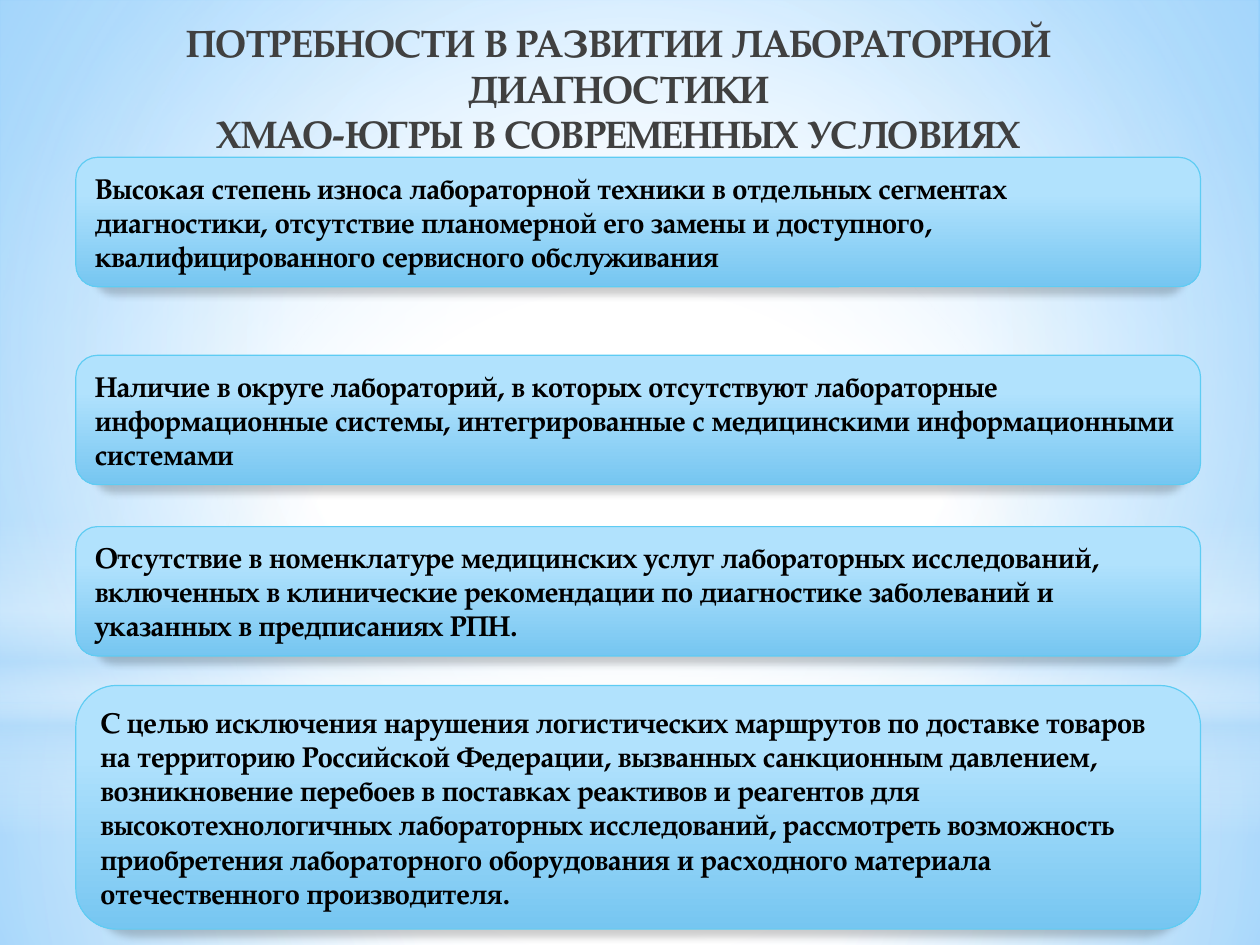
from lxml import etree
from pptx import Presentation
from pptx.dml.color import RGBColor
from pptx.enum.shapes import MSO_SHAPE as Shape
from pptx.enum.text import MSO_ANCHOR as Anchor, PP_ALIGN as Align
from pptx.oxml import parse_xml
from pptx.oxml.ns import nsdecls, qn
from pptx.util import Pt

COLORS = {
    "white": "FFFFFF", "sky": "63BCFF", "mist": "B4DCFA",
    "box_top": "B1E2FD", "box_bottom": "76C6F1", "box_line": "5ECCF3",
    "black": "000000", "title": "404040",
}
FONT = "TeX Gyre Pagella"
WIDTH, HEIGHT = 793.7, 595.28


def set_gradient(fill, element, stops, focus=None):
    """Fill with (position, colour, opacity) stops: circular around focus, else downwards."""
    fill.solid()
    stop_xml = "".join(
        f'<a:gs pos="{position * 1000}"><a:srgbClr val="{COLORS[color]}">'
        f'<a:alpha val="{opacity * 1000}"/></a:srgbClr></a:gs>'
        for position, color, opacity in stops)
    direction = '<a:lin ang="5400000" scaled="0"/>'
    if focus:
        sides = " ".join(f'{side}="{value * 1000}"' for side, value in zip("ltrb", focus))
        direction = f'<a:path path="circle"><a:fillToRect {sides}/></a:path>'
    gradient = parse_xml(f'<a:gradFill {nsdecls("a")} rotWithShape="1">'
                         f'<a:gsLst>{stop_xml}</a:gsLst>{direction}</a:gradFill>')
    solid = element.find(".//" + qn("a:solidFill"))
    solid.getparent().replace(solid, gradient)


def write(shape, *lines, size, color, align=Align.LEFT, anchor=Anchor.TOP, margins=(7.2, 3.6)):
    frame = shape.text_frame
    frame.word_wrap = True
    frame.vertical_anchor = anchor
    frame.margin_left = frame.margin_right = Pt(margins[0])
    frame.margin_top = frame.margin_bottom = Pt(margins[1])
    for number, line in enumerate(lines):
        paragraph = frame.add_paragraph() if number else frame.paragraphs[0]
        paragraph.alignment = align
        run = paragraph.add_run()
        run.text = line
        run.font.name = FONT
        run.font.size = Pt(size)
        run.font.bold = True
        run.font.color.rgb = RGBColor.from_string(COLORS[color])


presentation = Presentation()
presentation.slide_width, presentation.slide_height = Pt(WIDTH), Pt(HEIGHT)
slide = presentation.slides.add_slide(presentation.slide_layouts[6])
set_gradient(slide.background.fill, slide.element,
             [(0, "white", 100), (42, "white", 100), (100, "sky", 100)], (24, 44, 24, 12))

# Soft light bands and glow behind the content
CENTER = (50, 50, 50, 50)
HORIZON = 443.5
backdrop = [
    (Shape.RECTANGLE, HORIZON, HEIGHT - HORIZON, CENTER,
     [(0, "white", 91), (37, "white", 76), (100, "mist", 79)]),
    (Shape.RECTANGLE, 0, HORIZON, CENTER,
     [(0, "white", 89), (48, "white", 62), (100, "mist", 79)]),
    (Shape.RECTANGLE, 327, 198.5, None,
     [(0, "white", 0), (29, "white", 30), (45, "mist", 40),
      (55, "white", 26), (65, "mist", 60), (100, "white", 0)]),
    (Shape.OVAL, 139, HORIZON, CENTER, [(0, "white", 100), (56, "white", 0)]),
]
for kind, top, height, focus, stops in backdrop:
    layer = slide.shapes.add_shape(kind, 0, Pt(top), Pt(WIDTH), Pt(height))
    layer.shadow.inherit = False
    layer.line.fill.background()
    set_gradient(layer.fill, layer.element, stops, focus)

BOX_HEIGHT, LAST_HEIGHT = 81.5, 153.5
needs = [
    (223.8, BOX_HEIGHT,
     "Наличие в округе лабораторий, в которых отсутствуют лабораторные "
     "информационные системы, интегрированные с медицинскими информационными системами"),
    (331.7, BOX_HEIGHT,
     "Отсутствие в номенклатуре медицинских услуг лабораторных исследований, "
     "включенных в клинические рекомендации по диагностике заболеваний и "
     "указанных в предписаниях РПН."),
    (431.8, LAST_HEIGHT,
     "С целью исключения нарушения логистических маршрутов по доставке товаров "
     "на территорию Российской Федерации, вызванных санкционным давлением, "
     "возникновение перебоев в поставках реактивов и реагентов для "
     "высокотехнологичных лабораторных исследований, рассмотреть возможность "
     "приобретения лабораторного оборудования и расходного материала "
     "отечественного производителя."),
    (99.1, BOX_HEIGHT,
     "Высокая степень износа лабораторной техники в отдельных сегментах "
     "диагностики, отсутствие планомерной его замены и доступного, "
     "квалифицированного сервисного обслуживания"),
]
for top, height, text in needs:
    box = slide.shapes.add_shape(Shape.ROUNDED_RECTANGLE, Pt(47.8), Pt(top), Pt(708.5), Pt(height))
    set_gradient(box.fill, box.element, [(28, "box_top", 100), (100, "box_bottom", 100)])
    box.line.color.rgb = RGBColor.from_string(COLORS["box_line"])
    box.line.width = Pt(0.75)
    box.shadow.inherit = False
    effects = box.element.find(".//" + qn("a:effectLst"))
    shadow = etree.SubElement(effects, qn("a:outerShdw"), blurRad=str(Pt(5)), dist=str(Pt(4)),
                              dir="5400000", sx="97000", algn="ctr", rotWithShape="0")
    shadow_color = etree.SubElement(shadow, qn("a:srgbClr"), val=COLORS["black"])
    etree.SubElement(shadow_color, qn("a:alpha"), val="20000")
    write(box, text, size=18, color="black", anchor=Anchor.MIDDLE, margins=(8, 4))

title = slide.shapes.add_textbox(Pt(20), Pt(8.6), Pt(739.5), Pt(94.5))
write(title, "ПОТРЕБНОСТИ В РАЗВИТИИ ЛАБОРАТОРНОЙ ДИАГНОСТИКИ",
      "ХМАО-ЮГРЫ В СОВРЕМЕННЫХ УСЛОВИЯХ", size=24, color="title", align=Align.CENTER)

presentation.save("out.pptx")
